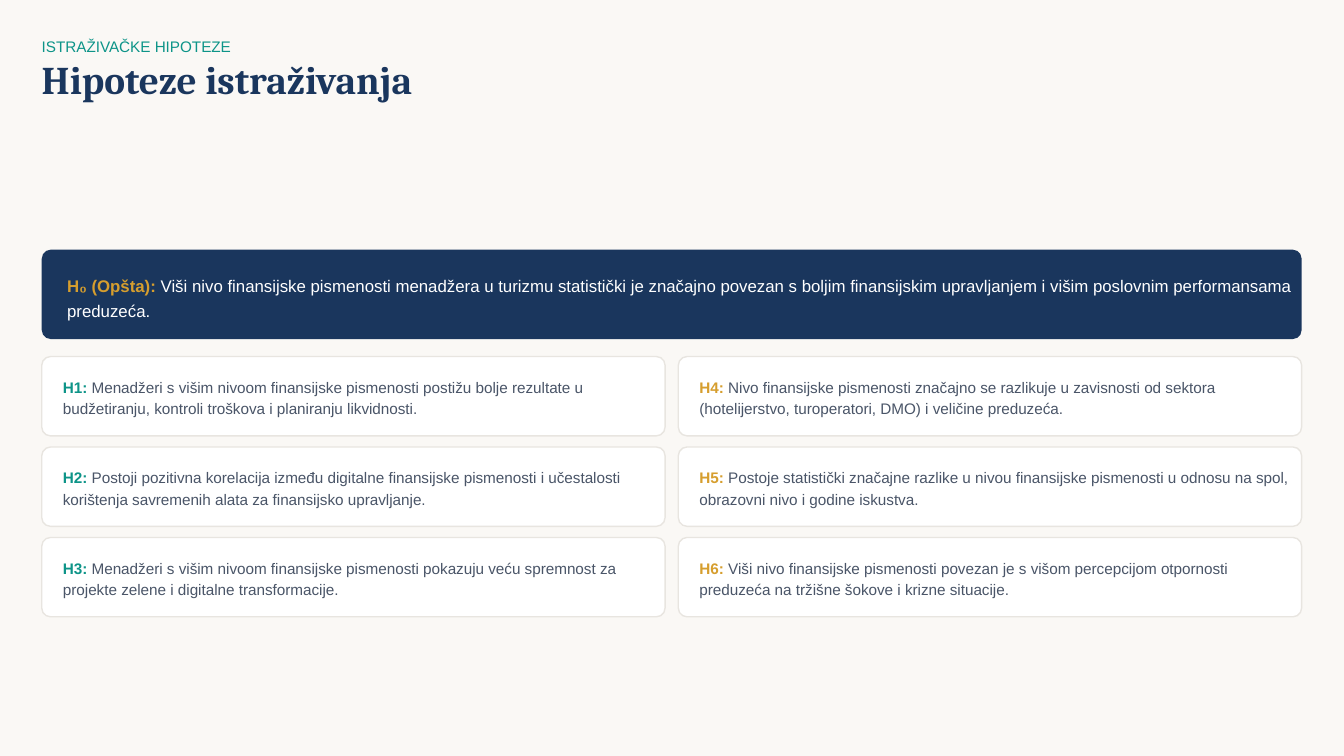
from dataclasses import dataclass

from pptx import Presentation
from pptx.dml.color import RGBColor
from pptx.enum.shapes import MSO_SHAPE
from pptx.util import Cm, Pt

ROUNDED = MSO_SHAPE.ROUNDED_RECTANGLE
BLANK_LAYOUT = 6


@dataclass(frozen=True)
class Theme:
    paper: str = "FAF8F5"
    navy: str = "1A365D"
    teal: str = "0D9488"
    gold: str = "D69E2E"
    slate: str = "4A5568"
    white: str = "FFFFFF"
    border: str = "E8E5E0"
    body_font: str = "Arial"
    title_font: str = "Cambria"
    title_size: float = 21
    lead_size: float = 9
    body_size: float = 8.2
    title_leading: float = 21
    lead_leading: float = 13.5
    body_leading: float = 11.6


class SlideBuilder:
    def __init__(self, slide, theme):
        self.slide = slide
        self.theme = theme

    def background(self, color):
        fill = self.slide.background.fill
        fill.solid()
        fill.fore_color.rgb = RGBColor.from_string(color)

    def panel(self, left, top, width, height, fill, radius, border=None):
        panel = self.slide.shapes.add_shape(
            ROUNDED, Cm(left), Cm(top), Cm(width), Cm(height))
        panel.shadow.inherit = False
        panel.adjustments[0] = radius
        panel.fill.solid()
        panel.fill.fore_color.rgb = RGBColor.from_string(fill)
        if border:
            panel.line.color.rgb = RGBColor.from_string(border)
            panel.line.width = Pt(0.75)
        else:
            panel.line.fill.background()

    def text(self, left, top, width, height, parts, size, leading, font=None):
        """Add one paragraph made of (wording, color, bold) parts."""
        box = self.slide.shapes.add_textbox(
            Cm(left), Cm(top), Cm(width), Cm(height))
        frame = box.text_frame
        frame.word_wrap = True
        frame.margin_left = frame.margin_right = 0
        frame.margin_top = frame.margin_bottom = 0
        paragraph = frame.paragraphs[0]
        paragraph.line_spacing = Pt(leading)
        for wording, color, bold in parts:
            run = paragraph.add_run()
            run.text = wording
            run.font.name = font or self.theme.body_font
            run.font.size = Pt(size)
            run.font.bold = bold
            run.font.color.rgb = RGBColor.from_string(color)

    def hypothesis_card(self, left, top, label, statement, accent):
        theme = self.theme
        self.panel(left, top, CARD_WIDTH, CARD_HEIGHT, theme.white, 0.11,
                   theme.border)
        self.text(left + 0.4, top + 0.34, 11.2, 0.81,
                  [(label, accent, True), (f" {statement}", theme.slate, False)],
                  theme.body_size, theme.body_leading)


MARGIN = 0.79
CONTENT_WIDTH = 23.81
CARD_TOP = 6.74
CARD_WIDTH = 11.78
CARD_HEIGHT = 1.5
COLUMN_GAP = 0.25
ROW_GAP = 0.21

GENERAL_HYPOTHESIS = (
    "Viši nivo finansijske pismenosti menadžera u turizmu statistički je "
    "značajno povezan s boljim finansijskim upravljanjem i višim poslovnim "
    "performansama preduzeća."
)
HYPOTHESIS_COLUMNS = [
    [
        "Menadžeri s višim nivoom finansijske pismenosti postižu bolje "
        "rezultate u budžetiranju, kontroli troškova i planiranju likvidnosti.",
        "Postoji pozitivna korelacija između digitalne finansijske pismenosti "
        "i učestalosti korištenja savremenih alata za finansijsko upravljanje.",
        "Menadžeri s višim nivoom finansijske pismenosti pokazuju veću "
        "spremnost za projekte zelene i digitalne transformacije.",
    ],
    [
        "Nivo finansijske pismenosti značajno se razlikuje u zavisnosti od "
        "sektora (hotelijerstvo, turoperatori, DMO) i veličine preduzeća.",
        "Postoje statistički značajne razlike u nivou finansijske pismenosti "
        "u odnosu na spol, obrazovni nivo i godine iskustva.",
        "Viši nivo finansijske pismenosti povezan je s višom percepcijom "
        "otpornosti preduzeća na tržišne šokove i krizne situacije.",
    ],
]


def main():
    theme = Theme()
    presentation = Presentation()
    presentation.slide_width = Cm(25.4)
    presentation.slide_height = Cm(14.29)
    layout = presentation.slide_layouts[BLANK_LAYOUT]
    builder = SlideBuilder(presentation.slides.add_slide(layout), theme)

    builder.background(theme.paper)
    builder.text(MARGIN, 0.64, 24.28, 0.41,
                 [("ISTRAŽIVAČKE HIPOTEZE", theme.teal, False)],
                 theme.body_size, theme.body_leading)
    builder.text(MARGIN, 1.19, 12.17, 0.74,
                 [("Hipoteze istraživanja", theme.navy, True)],
                 theme.title_size, theme.title_leading, theme.title_font)

    builder.panel(MARGIN, 4.72, CONTENT_WIDTH, 1.69, theme.navy, 0.1)
    builder.text(1.27, 5.11, 23.32, 0.95,
                 [("H₀ (Opšta):", theme.gold, True),
                  (f" {GENERAL_HYPOTHESIS}", theme.white, False)],
                 theme.lead_size, theme.lead_leading)

    accents = (theme.teal, theme.gold)
    for column, (statements, accent) in enumerate(zip(HYPOTHESIS_COLUMNS, accents)):
        left = MARGIN + column * (CARD_WIDTH + COLUMN_GAP)
        for row, statement in enumerate(statements):
            top = CARD_TOP + row * (CARD_HEIGHT + ROW_GAP)
            number = column * len(statements) + row + 1
            builder.hypothesis_card(left, top, f"H{number}:", statement, accent)

    presentation.save("out.pptx")


if __name__ == "__main__":
    main()
